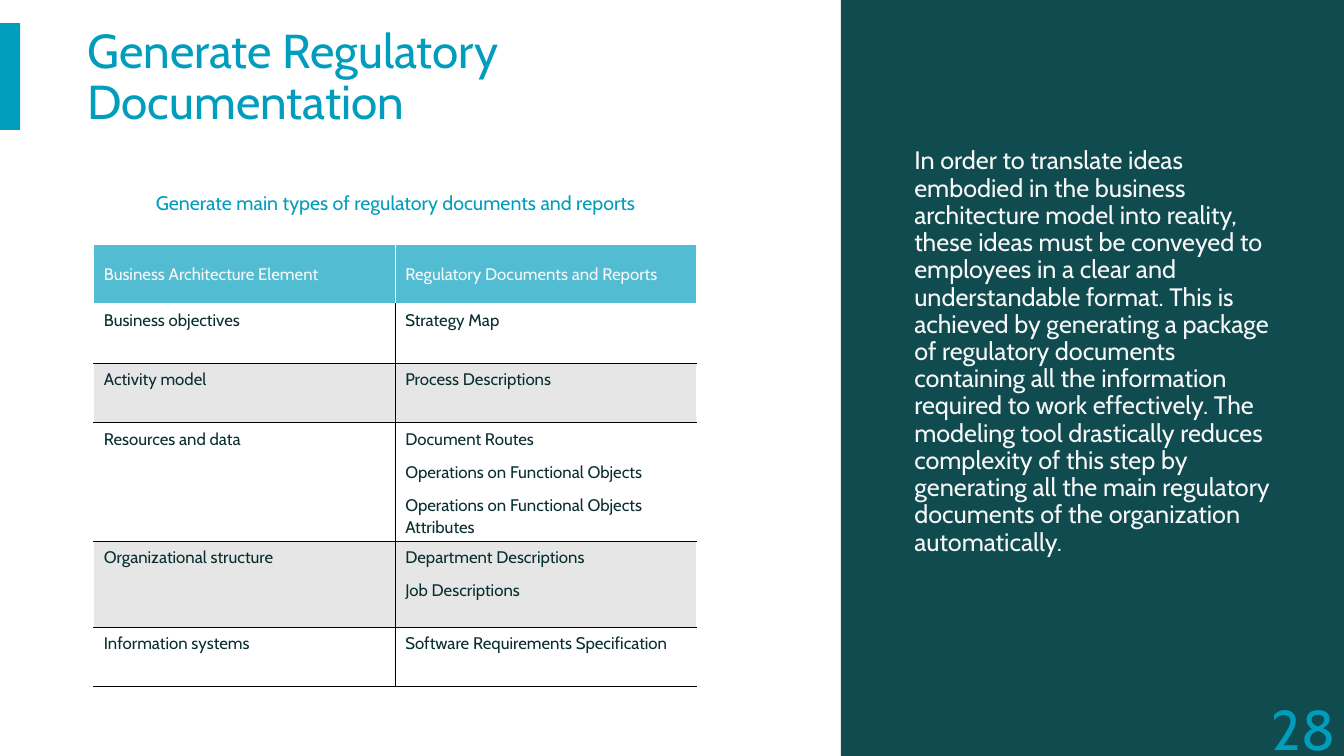
"""Builds the slide on generating regulatory documentation."""
import pptx
import pptx.util
import pptx.dml.color
import pptx.enum.shapes
import pptx.enum.text
import pptx.oxml
import pptx.oxml.ns

Inches = pptx.util.Inches
Pt = pptx.util.Pt
RGBColor = pptx.dml.color.RGBColor
PP_ALIGN = pptx.enum.text.PP_ALIGN
MSO_ANCHOR = pptx.enum.text.MSO_ANCHOR

FONT = "Cabin"
TEAL = RGBColor(0x00, 0x9D, 0xBC)
DARK_TEAL = RGBColor(0x10, 0x4B, 0x50)
HEADER_TEAL = RGBColor(0x52, 0xBD, 0xD2)
INK = RGBColor(0x09, 0x2E, 0x30)
OFF_WHITE = RGBColor(0xF8, 0xF8, 0xF8)
WHITE = RGBColor(0xFF, 0xFF, 0xFF)
BLACK = RGBColor(0x00, 0x00, 0x00)
GREY = RGBColor(0xE7, 0xE6, 0xE6)

TITLE = "Generate Regulatory Documentation"
SUBTITLE = "Generate main types of regulatory documents and reports"
EXPLANATION = (
    "In order to translate ideas embodied in the business architecture model into reality, "
    "these ideas must be conveyed to employees in a clear and understandable format. "
    "This is achieved by generating a package of regulatory documents containing all the "
    "information required to work effectively. The modeling tool drastically reduces complexity "
    "of this step by generating all the main regulatory documents of the organization "
    "automatically."
)
ROWS = [
    (0.59, "Business Architecture Element", ["Regulatory Documents and Reports"]),
    (0.59, "Business objectives", ["Strategy Map"]),
    (0.59, "Activity model", ["Process Descriptions"]),
    (0.95, "Resources and data", ["Document Routes", "Operations on Functional Objects",
                                  "Operations on Functional Objects Attributes"]),
    (0.72, "Organizational structure", ["Department Descriptions", "Job Descriptions\n"]),
    (0.59, "Information systems", ["Software Requirements Specification"]),
]


def add_block(page, left, top, width, height, color):
    """Add a plain filled rectangle."""
    block = page.shapes.add_shape(pptx.enum.shapes.MSO_SHAPE.RECTANGLE, Inches(left),
                                  Inches(top), Inches(width), Inches(height))
    block.shadow.inherit = False
    block.fill.solid()
    block.fill.fore_color.rgb = color
    block.line.fill.background()


def add_span(para, text, size, color):
    """Add one formatted run, ending in a line break if the text does."""
    span = para.add_run()
    span.text = text.rstrip("\n")
    span.font.name = FONT
    span.font.size = Pt(size)
    span.font.bold = False
    span.font.color.rgb = color
    if text.endswith("\n"):
        para.add_line_break()
        para.font.size = Pt(size)


def add_text(page, left, top, width, height, text, size, color,
             align=PP_ALIGN.LEFT, anchor=MSO_ANCHOR.TOP, spacing=0.9):
    """Add a wrapping text box with one paragraph."""
    box = page.shapes.add_textbox(Inches(left), Inches(top), Inches(width), Inches(height))
    frame = box.text_frame
    frame.word_wrap = True
    frame.vertical_anchor = anchor
    para = frame.paragraphs[0]
    para.alignment = align
    para.line_spacing = spacing
    add_span(para, text, size, color)


def set_borders(cell, borders):
    """Draw cell borders given as (side, colour, points) in L, R, T, B order."""
    properties = cell._tc.get_or_add_tcPr()
    for index, (side, color, points) in enumerate(borders):
        line = pptx.oxml.parse_xml(
            f'<a:ln{side} {pptx.oxml.ns.nsdecls("a")} w="{int(Pt(points))}">'
            f'<a:solidFill><a:srgbClr val="{color}"/></a:solidFill></a:ln{side}>')
        properties.insert(index, line)


def fill_cell(cell, texts, row, column):
    """Fill one table cell with its paragraphs, background and borders."""
    header = row == 0
    cell.fill.solid()
    cell.fill.fore_color.rgb = HEADER_TEAL if header else WHITE if row % 2 else GREY
    cell.vertical_anchor = MSO_ANCHOR.MIDDLE if header else MSO_ANCHOR.TOP
    frame = cell.text_frame
    for index, text in enumerate(texts):
        para = frame.add_paragraph() if index else frame.paragraphs[0]
        para.line_spacing = 1.07
        para.space_after = Pt(8)
        add_span(para, text, 12, OFF_WHITE if header else INK)
    inner = ("L" if column else "R", WHITE if header else BLACK, 1 if header else 0.25)
    black = (BLACK, 0.25)
    white = (WHITE, 0.5)
    borders = [inner]
    if not header:
        borders.append(("T", *(white if row == 1 else black)))
    borders.append(("B", *(white if header else black)))
    set_borders(cell, borders)


def add_document_table(page):
    """Add the table of architecture elements and their documents."""
    height = sum(row[0] for row in ROWS)
    table = page.shapes.add_table(len(ROWS), 2, Inches(0.93), Inches(2.42),
                                  Inches(5.98), Inches(height)).table
    table.first_row = False
    table.horz_banding = False
    for row, (row_height, element, documents) in enumerate(ROWS):
        table.rows[row].height = Inches(row_height)
        fill_cell(table.cell(row, 0), [element], row, 0)
        fill_cell(table.cell(row, 1), documents, row, 1)


def main():
    """Build and save the deck."""
    deck = pptx.Presentation()
    deck.slide_width = Inches(13.33)
    deck.slide_height = Inches(7.5)
    page = deck.slides.add_slide(deck.slide_layouts[6])
    add_block(page, 8.34, 0, 4.99, 7.5, DARK_TEAL)
    add_text(page, 10.34, 7.02, 3, 0.4, "28", 40, TEAL, PP_ALIGN.RIGHT,
             MSO_ANCHOR.MIDDLE, 1.0)
    add_text(page, 0.93, 1.87, 5.99, 0.4, SUBTITLE, 14, TEAL, PP_ALIGN.CENTER)
    add_text(page, 0.77, 0.22, 6.29, 1.13, TITLE, 34, TEAL)
    add_text(page, 8.97, 1.42, 3.73, 4.28, EXPLANATION, 18, OFF_WHITE)
    add_block(page, 0, 0.23, 0.2, 1.06, TEAL)
    add_document_table(page)
    deck.save("out.pptx")


if __name__ == "__main__":
    main()
